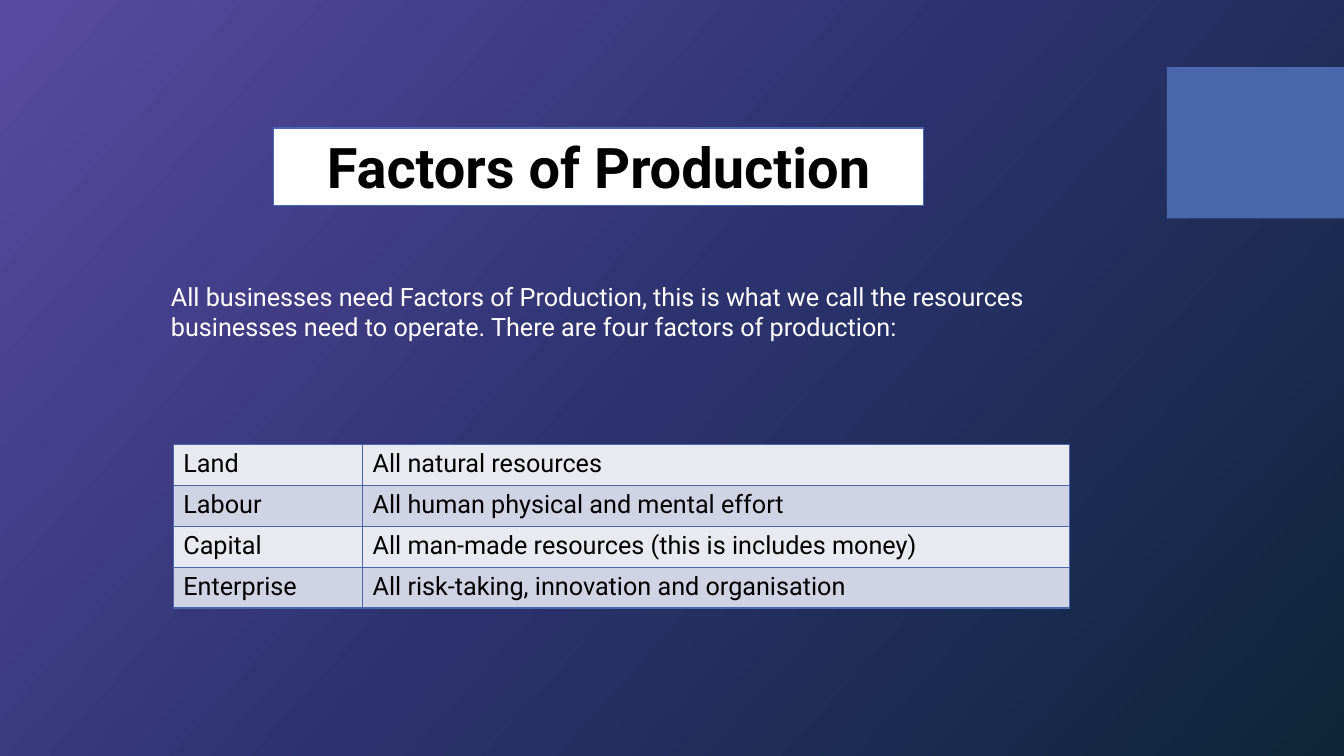
from copy import deepcopy

from lxml.etree import SubElement
from pptx import Presentation
from pptx.dml.color import RGBColor
from pptx.enum.shapes import MSO_SHAPE as Preset
from pptx.enum.text import MSO_ANCHOR as Anchor, PP_ALIGN as Align
from pptx.oxml.ns import qn
from pptx.util import Pt

COLORS = {
    "violet": "594AA1", "indigo": "2C326E", "navy": "0D2538",
    "accent": "4A66AC", "white": "FFFFFF", "black": "000000",
    "light row": "E9EAF1", "dark row": "D0D3E3",
}
FACTORS = [
    ("Land", "All natural resources"),
    ("Labour", "All human physical and mental effort"),
    ("Capital", "All man-made resources (this is includes money)"),
    ("Enterprise", "All risk-taking, innovation and organisation"),
]


def rgb(color):
    return RGBColor.from_string(COLORS[color])


class SlideBuilder:
    font = "Roboto"
    body_size = 18

    def __init__(self, slide):
        self.slide = slide

    def background(self, colors, angle):
        fill = self.slide.background.fill
        fill.gradient()
        fill.gradient_angle = 360 - angle
        stops = self.slide.element.xpath(".//a:gsLst")[0]
        for _ in colors[2:]:
            stops.insert(1, deepcopy(stops[0]))
        for i, (stop, color) in enumerate(zip(fill.gradient_stops, colors)):
            stop.position = i / (len(colors) - 1)
            stop.color.rgb = rgb(color)

    def put_text(self, frame, text, color, align=Align.LEFT, **formats):
        frame.word_wrap = True
        paragraph = frame.paragraphs[0]
        paragraph.alignment = align
        run = paragraph.add_run()
        run.text = text
        run.font.color.rgb = rgb(color)
        style = {"name": self.font, "size": Pt(self.body_size)} | formats
        for key, value in style.items():
            setattr(run.font, key, value)

    def box(self, left, top, width, height, fill, line=None):
        box = self.slide.shapes.add_shape(
            Preset.RECTANGLE, Pt(left), Pt(top), Pt(width), Pt(height))
        box.shadow.inherit = False
        box.fill.solid()
        box.fill.fore_color.rgb = rgb(fill)
        if line:
            box.line.color.rgb = rgb(line)
            box.line.width = Pt(1)
        else:
            box.line.fill.background()
        return box

    def text(self, left, top, width, height, text, color):
        box = self.slide.shapes.add_textbox(
            Pt(left), Pt(top), Pt(width), Pt(height))
        self.put_text(box.text_frame, text, color)

    def borders(self, cell, color):
        properties = cell._tc.get_or_add_tcPr()
        for i, side in enumerate(("lnL", "lnR", "lnT", "lnB")):
            line = properties.makeelement(qn(f"a:{side}"), {"w": str(Pt(1))})
            fill = SubElement(line, qn("a:solidFill"))
            SubElement(fill, qn("a:srgbClr"), val=COLORS[color])
            properties.insert(i, line)

    def table(self, left, top, widths, row_height, rows):
        table = self.slide.shapes.add_table(
            len(rows), len(widths), Pt(left), Pt(top),
            Pt(sum(widths)), Pt(row_height * len(rows))).table
        table.first_row = table.horz_banding = False
        for column, width in zip(table.columns, widths):
            column.width = Pt(width)
        for r, texts in enumerate(rows):
            table.rows[r].height = Pt(row_height)
            for c, text in enumerate(texts):
                cell = table.cell(r, c)
                cell.fill.solid()
                cell.fill.fore_color.rgb = rgb(
                    "dark row" if r % 2 else "light row")
                self.borders(cell, "accent")
                self.put_text(cell.text_frame, text, "black")


def main():
    deck = Presentation()
    deck.slide_width, deck.slide_height = Pt(960), Pt(540)
    builder = SlideBuilder(deck.slides.add_slide(deck.slide_layouts[6]))

    # Background and corner block
    builder.background(["violet", "indigo", "navy"], 42)
    builder.box(833.5, 48, 126.5, 108, "accent")

    # Title
    title = builder.box(195.3, 91.3, 464.4, 55.7, "white", "accent")
    title.text_frame.vertical_anchor = Anchor.TOP
    builder.put_text(title.text_frame, "Factors of Production", "black",
                     Align.CENTER, size=Pt(40), bold=True)

    # Introduction
    builder.text(115, 197.5, 657.5, 51,
                 "All businesses need Factors of Production, this is what we "
                 "call the resources businesses need to operate. There are "
                 "four factors of production:", "white")

    # The four factors
    builder.table(123.8, 317.5, [135.2, 504.8], 29.2, FACTORS)

    deck.save("out.pptx")


if __name__ == "__main__":
    main()
